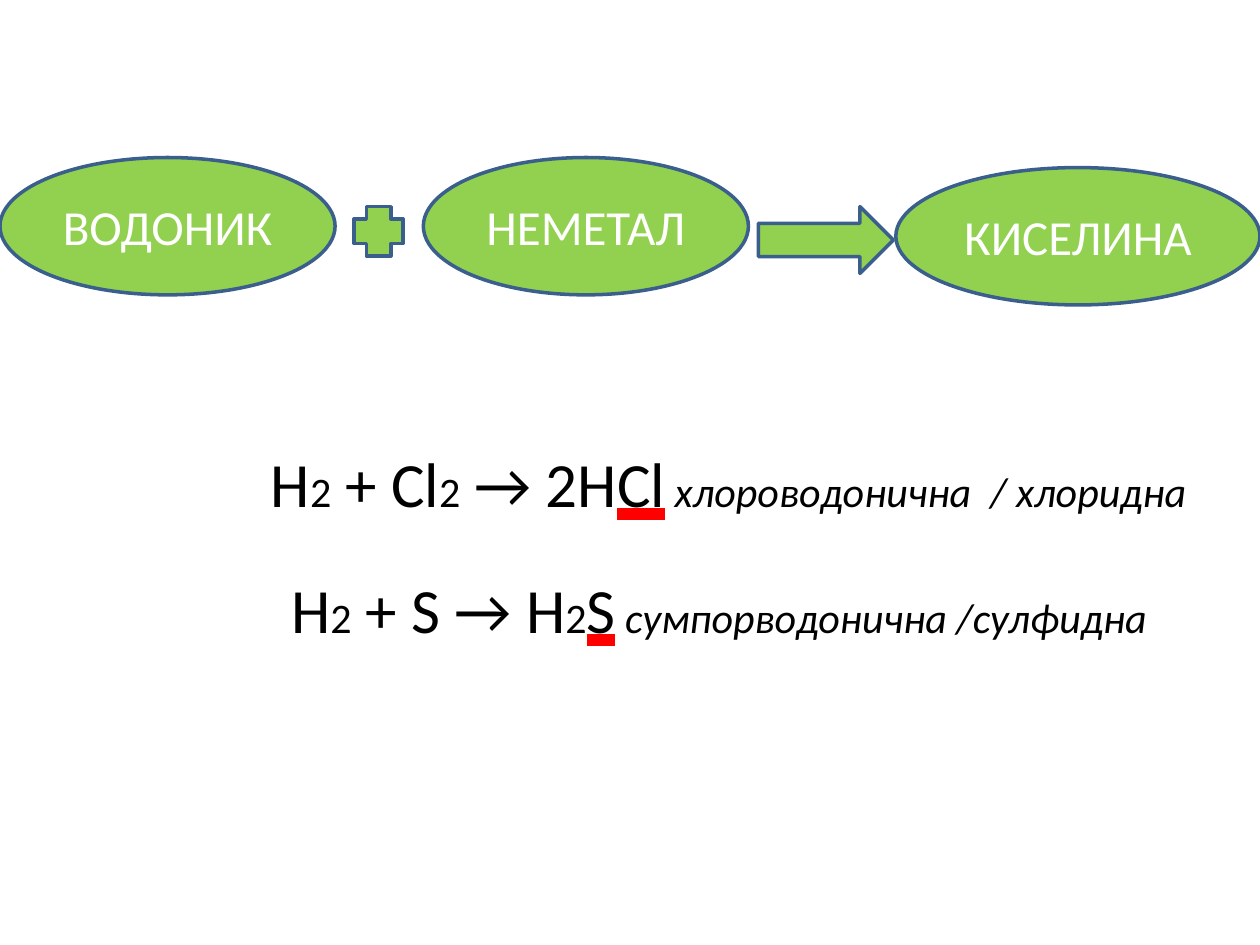
import pptx
import pptx.dml.color
import pptx.enum.shapes
import pptx.enum.text
import pptx.oxml
import pptx.oxml.ns
import pptx.util

Inches = pptx.util.Inches
Pt = pptx.util.Pt
SHAPES = pptx.enum.shapes.MSO_SHAPE
GREEN, BLUE, WHITE, BLACK, RED = "92D050", "3A5F8C", "FFFFFF", "000000", "FF0000"

# Run styles: size, underlined, italic
FORMULA = (36, False, False)
SMALL = (24, False, False)
ANION = (36, True, False)
NAME = (24, False, True)

EQUATIONS = [
    [(" ", SMALL), ("H", FORMULA), ("2", SMALL), (" + Cl", FORMULA),
     ("2", SMALL), (" → 2H", FORMULA), ("Cl", ANION), (" ", SMALL),
     ("хлороводонична  / хлоридна", NAME)],
    [("H", FORMULA), ("2", SMALL), (" + S → H", FORMULA), ("2", SMALL),
     ("S", ANION), (" ", SMALL), ("сумпорводонична /сулфидна ", NAME)],
]


def color(value):
    return pptx.dml.color.RGBColor.from_string(value)


def add_shape(page, kind, left, top, width, height, fill=GREEN, line=BLUE):
    shape = page.shapes.add_shape(
        kind, Inches(left), Inches(top), Inches(width), Inches(height))
    shape.shadow.inherit = False
    shape.fill.solid()
    shape.fill.fore_color.rgb = color(fill)
    shape.line.color.rgb = color(line)
    shape.line.width = Pt(2)
    shape.text_frame.vertical_anchor = pptx.enum.text.MSO_ANCHOR.MIDDLE
    return shape


def format_span(span, size, ink):
    span.font.name = "Calibri"
    span.font.size = Pt(size)
    span.font.color.rgb = color(ink)


def underline_red(span):
    span.font.underline = pptx.enum.text.MSO_UNDERLINE.HEAVY_LINE
    underline_fill = pptx.oxml.parse_xml(
        f'<a:uFill {pptx.oxml.ns.nsdecls("a")}><a:solidFill>'
        f'<a:srgbClr val="{RED}"/></a:solidFill></a:uFill>')
    text_fill = span.font.fill._xPr.find(pptx.oxml.ns.qn("a:solidFill"))
    text_fill.addnext(underline_fill)


def add_ellipse(page, text, left, top, width):
    ellipse = add_shape(page, SHAPES.OVAL, left, top, width, 1.09)
    ellipse.text_frame.text = text
    para = ellipse.text_frame.paragraphs[0]
    para.alignment = pptx.enum.text.PP_ALIGN.CENTER
    format_span(para.runs[0], 28, WHITE)


def add_equations(page):
    box = add_shape(page, SHAPES.RECTANGLE, 1.72, 2.97, 8.05, 3.13, WHITE, WHITE)
    frame = box.text_frame
    frame.word_wrap = True
    frame.margin_bottom = Inches(0.46)
    for index, equation in enumerate(EQUATIONS):
        para = frame.add_paragraph() if index else frame.paragraphs[0]
        para.alignment = pptx.enum.text.PP_ALIGN.CENTER
        if index:
            para.space_before = Pt(29)
        for text, (size, underlined, italic) in equation:
            span = para.add_run()
            span.text = text
            format_span(span, size, BLACK)
            span.font.italic = italic
            if underlined:
                underline_red(span)


def main():
    deck = pptx.Presentation()
    deck.slide_width, deck.slide_height = Inches(10), Inches(7.5)
    page = deck.slides.add_slide(deck.slide_layouts[6])

    # Word equation: hydrogen plus nonmetal gives acid
    add_ellipse(page, "ВОДОНИК", 0, 1.25, 2.66)
    add_ellipse(page, "НЕМЕТАЛ", 3.36, 1.25, 2.58)
    add_ellipse(page, "КИСЕЛИНА", 7.11, 1.33, 2.89)
    plus = add_shape(page, SHAPES.CROSS, 2.81, 1.64, 0.39, 0.39)
    plus.adjustments[0] = 0.25
    add_shape(page, SHAPES.RIGHT_ARROW, 6.02, 1.64, 1.07, 0.53)

    # Chemical equations with the acid names
    add_equations(page)

    deck.save("out.pptx")


if __name__ == "__main__":
    main()
